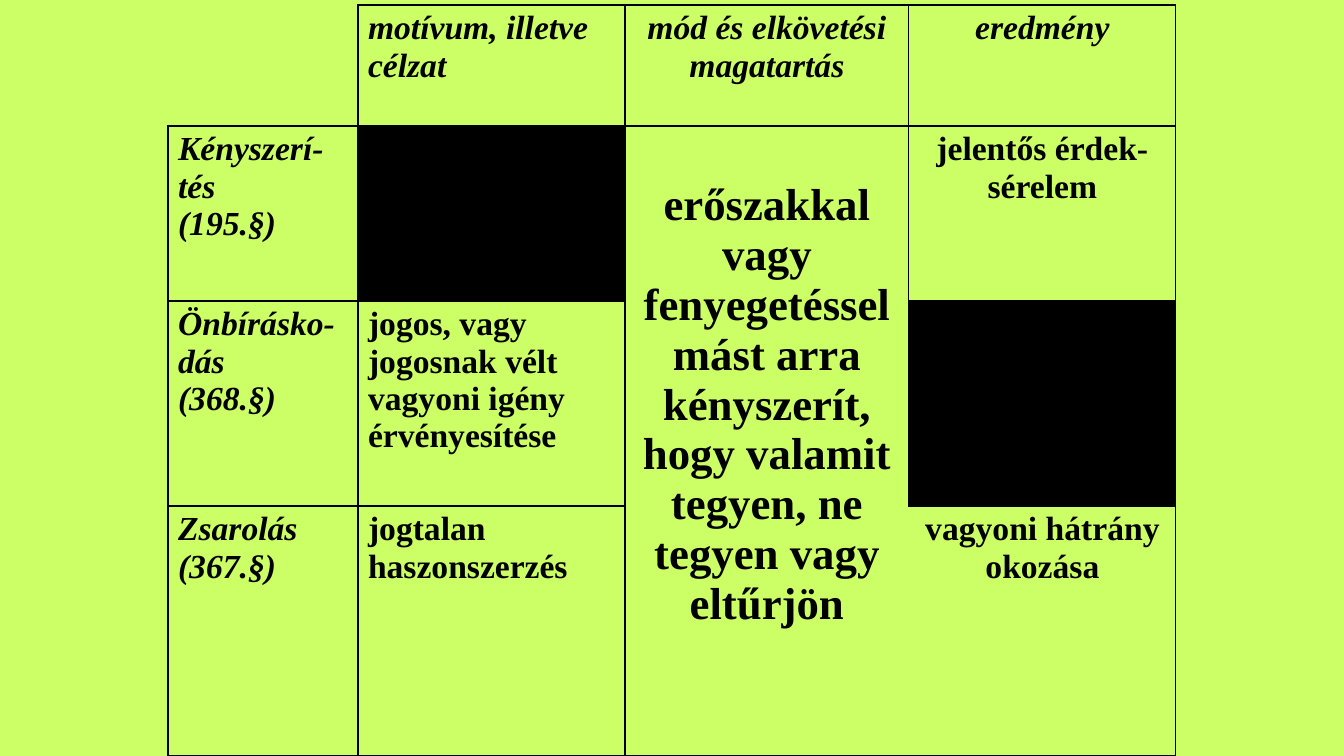
from lxml.etree import SubElement
from pptx import Presentation
from pptx.dml.color import RGBColor
from pptx.enum.text import PP_ALIGN
from pptx.oxml.ns import qn
from pptx.util import Pt

SCALE = 914400 / 100.8
LIME = RGBColor(0xCC, 0xFF, 0x66)
BLACK = RGBColor(0, 0, 0)
FONT = {"name": "Times New Roman", "bold": True}

COLS = [190, 267, 284, 267]
ROWS = [121, 175, 205, 250]
METHOD = ("erőszakkal vagy fenyegetéssel mást arra kényszerít,\n"
          "hogy valamit tegyen, ne tegyen vagy eltűrjön")
TEXTS = [
    ["", "motívum, illetve célzat", "mód és elkövetési magatartás", "eredmény"],
    ["Kényszerí-tés\n(195.§)", "", METHOD, "jelentős érdek-sérelem"],
    ["Önbírásko-dás\n(368.§)",
     "jogos, vagy jogosnak vélt vagyoni igény érvényesítése", "", ""],
    ["Zsarolás\n(367.§)", "jogtalan haszonszerzés", "", "vagyoni hátrány okozása"],
]
DARK = {(1, 1), (2, 3)}
SIDES = {(0, 0): "RB", (2, 2): "LR", (3, 2): "LB", (3, 3): "RTB"}


def px(n):
    return round(n * SCALE)


def edge(cell, sides):
    """Draw thin black lines on the named sides and none on the others."""
    props = cell._tc.get_or_add_tcPr()
    for side in "LRTB":
        line = SubElement(props, qn(f"a:ln{side}"), w=str(Pt(1)))
        if side in sides:
            fill = SubElement(line, qn("a:solidFill"))
            SubElement(fill, qn("a:srgbClr"), val=str(BLACK))
        else:
            SubElement(line, qn("a:noFill"))


def paint(cell, dark):
    if dark:
        cell.fill.solid()
        cell.fill.fore_color.rgb = BLACK
    else:
        cell.fill.background()


def write(cell, text, align, **style):
    cell.text = text
    for para in cell.text_frame.paragraphs:
        para.alignment = align
        para.font.color.rgb = BLACK
        for key, value in {**FONT, **style}.items():
            setattr(para.font, key, value)


def add_grid(slide, left, top):
    size = len(ROWS), len(COLS)
    box = [px(n) for n in (left, top, sum(COLS), sum(ROWS))]
    table = slide.shapes.add_table(*size, *box).table
    table.first_row = table.horz_banding = False
    for col, width in zip(table.columns, COLS):
        col.width = px(width)
    for row, height in zip(table.rows, ROWS):
        row.height = px(height)
    table.cell(1, 2).merge(table.cell(3, 2))
    for r, line in enumerate(TEXTS):
        for c, text in enumerate(line):
            cell = table.cell(r, c)
            edge(cell, SIDES.get((r, c), "LRTB"))
            paint(cell, (r, c) in DARK)
            if text:
                write(cell, text, PP_ALIGN.CENTER if c > 1 else PP_ALIGN.LEFT,
                      size=Pt(32 if text == METHOD else 24),
                      italic=r == 0 or c == 0)
    table.cell(1, 2).margin_top = px(55)


def main():
    deck = Presentation()
    deck.slide_width, deck.slide_height = px(1344), px(756)
    slide = deck.slides.add_slide(deck.slide_layouts[6])
    back = slide.background.fill
    back.solid()
    back.fore_color.rgb = LIME
    add_grid(slide, 168, 5)
    deck.save("out.pptx")


if __name__ == "__main__":
    main()
